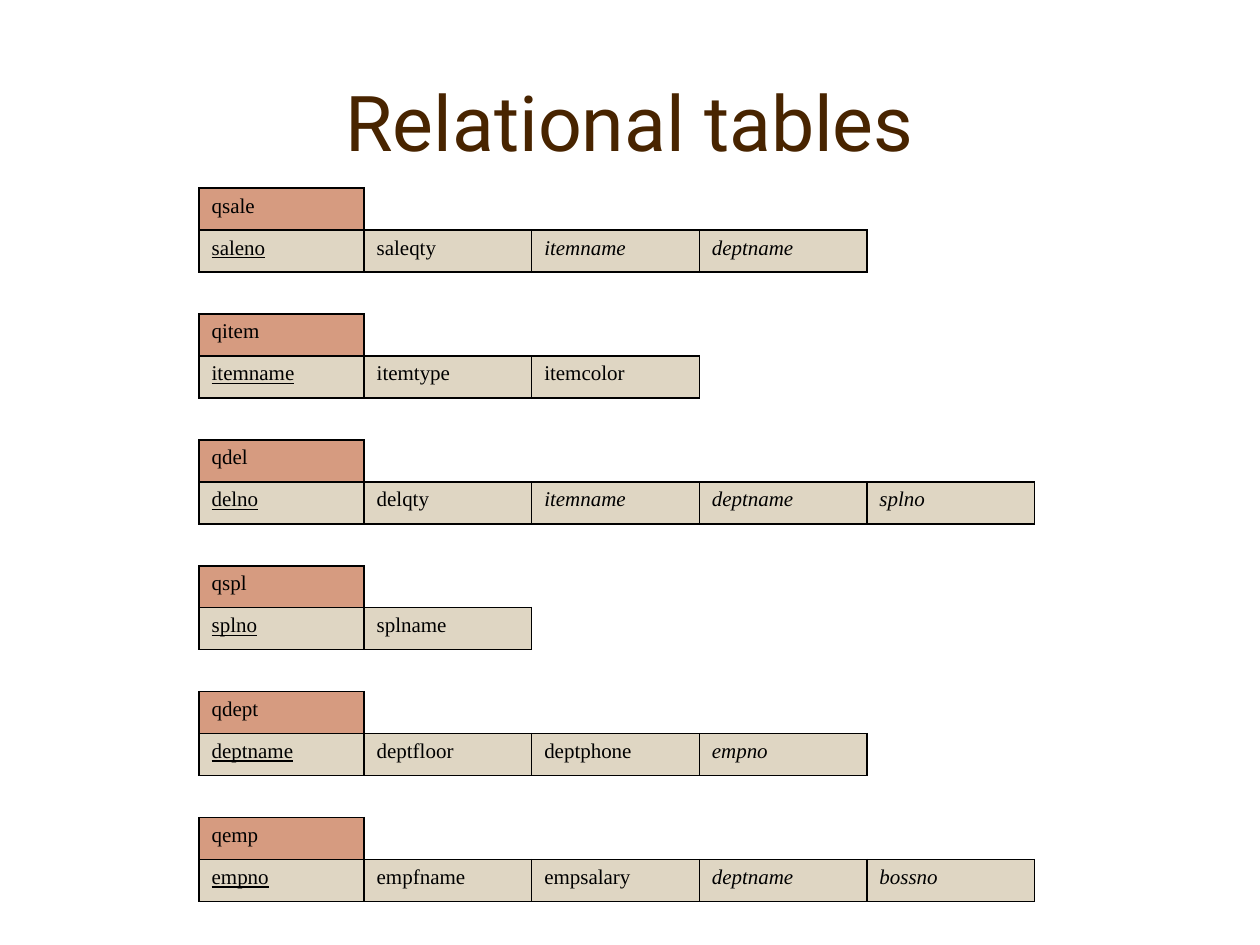
from lxml.etree import SubElement
from pptx import Presentation
from pptx.dml.color import RGBColor
from pptx.enum.text import MSO_ANCHOR, PP_ALIGN
from pptx.oxml.ns import qn
from pptx.util import Inches, Pt

WIDTH, HEIGHT = 10, 7.5
ROW_SHARE = 1 / 22.5
COLUMN_SHARES = [0.131] + [0.133] * 4
NO_STYLE = "{2D5ABB26-0587-4C30-8999-92F81FD0307C}"
EDGES = {"a:lnL": (0, -1), "a:lnR": (0, 1), "a:lnT": (-1, 0), "a:lnB": (1, 0)}

# Each relation: name and columns; "_" marks a primary key, "/" a foreign key
RELATIONS = {
    "qsale": ["_saleno", "saleqty", "/itemname", "/deptname"],
    "qitem": ["_itemname", "itemtype", "itemcolor"],
    "qdel": ["_delno", "delqty", "/itemname", "/deptname", "/splno"],
    "qspl": ["_splno", "splname"],
    "qdept": ["_deptname", "deptfloor", "deptphone", "/empno"],
    "qemp": ["_empno", "empfname", "empsalary", "/deptname", "/bossno"],
}


def color(hex_value):
    return RGBColor.from_string(hex_value)


class SlideBuilder:
    heading = {"name": "Roboto", "size": Pt(44)}
    body = {"name": "Times New Roman", "size": Pt(12)}
    heading_color, ink = "482400", "000000"
    name_fill, column_fill = "D69B80", "DFD6C3"

    def __init__(self, slide):
        self.slide = slide

    def place(self, left, top, width, height):
        return (Inches(left * WIDTH), Inches(top * HEIGHT),
                Inches(width * WIDTH), Inches(height * HEIGHT))

    def add_text(self, paragraph, text, align, ink, formats):
        paragraph.alignment = align
        run = paragraph.add_run()
        run.text = text
        run.font.color.rgb = color(ink)
        for attribute, value in formats.items():
            setattr(run.font, attribute, value)

    def title(self, text, *area):
        frame = self.slide.shapes.add_textbox(*self.place(*area)).text_frame
        frame.word_wrap = True
        frame.vertical_anchor = MSO_ANCHOR.MIDDLE
        self.add_text(frame.paragraphs[0], text, PP_ALIGN.CENTER,
                      self.heading_color, self.heading)

    def borders(self, cell, row, column, filled):
        # An edge is drawn when the cell on either side of it holds text
        properties = cell._tc.get_or_add_tcPr()
        for tag, (down, across) in EDGES.items():
            drawn = filled & {(row, column), (row + down, column + across)}
            line = SubElement(properties, qn(tag), w=str(Pt(1)))
            if drawn:
                paint = SubElement(line, qn("a:solidFill"))
                SubElement(paint, qn("a:srgbClr"), val=self.ink)
            else:
                SubElement(line, qn("a:noFill"))

    def cell(self, cell, text, fill):
        paragraph = cell.text_frame.paragraphs[0]
        if not text:
            cell.fill.background()
            SubElement(paragraph._p, qn("a:endParaRPr"),
                       sz=str(int(self.body["size"].pt * 100)))
            return
        cell.fill.solid()
        cell.fill.fore_color.rgb = color(fill)
        paragraph.space_after = Pt(3)
        key_format = {"underline": text.startswith("_"),
                      "italic": text.startswith("/")}
        self.add_text(paragraph, text.lstrip("_/"), PP_ALIGN.JUSTIFY, self.ink,
                      self.body | key_format)

    def relations(self, relations, left, top):
        # A name row, a column row and an empty row for each relation
        texts = {}
        for index, (name, columns) in enumerate(relations.items()):
            texts[3 * index, 0] = name
            for column, text in enumerate(columns):
                texts[3 * index + 1, column] = text
        row_count = 3 * len(relations) - 1
        area = self.place(left, top, sum(COLUMN_SHARES), row_count * ROW_SHARE)
        frame = self.slide.shapes.add_table(
            row_count, len(COLUMN_SHARES), *area)
        table = frame.table
        table.first_row = table.horz_banding = False
        table._tbl.tblPr.find(qn("a:tableStyleId")).text = NO_STYLE
        for column, share in zip(table.columns, COLUMN_SHARES):
            column.width = Inches(share * WIDTH)
        for row in range(row_count):
            table.rows[row].height = Inches(ROW_SHARE * HEIGHT)
            fill = self.column_fill if row % 3 else self.name_fill
            for column in range(len(COLUMN_SHARES)):
                cell = table.cell(row, column)
                self.borders(cell, row, column, texts.keys())
                self.cell(cell, texts.get((row, column)), fill)


def main():
    presentation = Presentation()
    presentation.slide_width = Inches(WIDTH)
    presentation.slide_height = Inches(HEIGHT)
    blank = presentation.slide_layouts[6]
    builder = SlideBuilder(presentation.slides.add_slide(blank))
    # Heading
    builder.title("Relational tables", 0.025, 0.044, 0.95, 0.167)
    # Relations with their columns
    builder.relations(RELATIONS, 0.158, 0.199)
    presentation.save("out.pptx")


if __name__ == "__main__":
    main()
